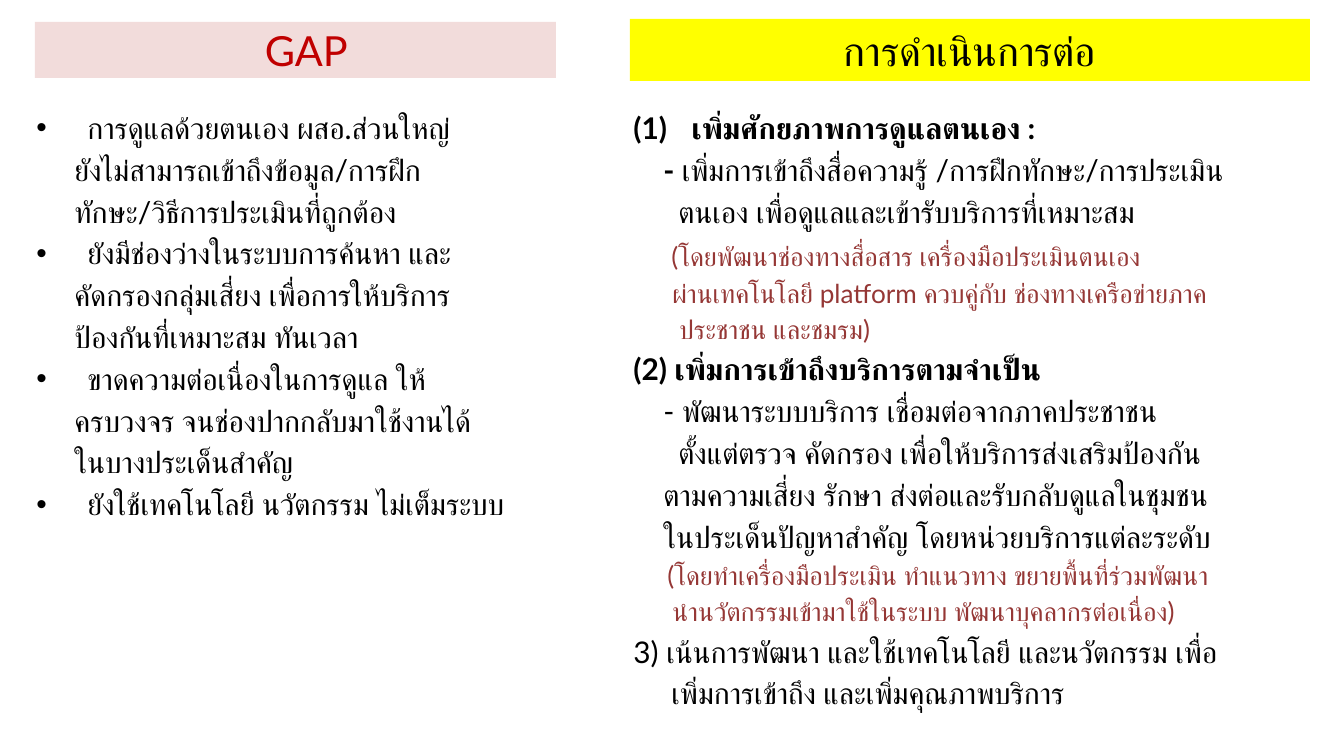
from dataclasses import dataclass

from lxml.etree import SubElement
from pptx import Presentation
from pptx.dml.color import RGBColor
from pptx.enum.shapes import MSO_SHAPE
from pptx.enum.text import MSO_ANCHOR, MSO_AUTO_SIZE, PP_ALIGN
from pptx.oxml.ns import qn
from pptx.util import Emu, Pt

SCALE = 914400 / 134.4
FONT = "Lato"
BLACK = "000000"
MAROON = "953735"
HANG = 51
WRAPPED = 38


@dataclass
class Frame:
    left: int
    top: int
    width: int
    height: int


@dataclass
class Line:
    text: str
    margin: int = 0
    size: int = 16
    color: str = BLACK
    bold: bool = False
    bullet: str = ""
    lead: str = ""
    before: float = 0


def px(length: int) -> Emu:
    return Emu(round(length * SCALE))


def rgb(color: str) -> RGBColor:
    return RGBColor.from_string(color)


def place(shape, frame: Frame) -> None:
    shape.left, shape.top = px(frame.left), px(frame.top)
    shape.width, shape.height = px(frame.width), px(frame.height)


def style(span, size: float, color: str, bold: bool = False) -> None:
    span.font.name = FONT
    span.font.size = Pt(size)
    span.font.bold = bold
    span.font.color.rgb = rgb(color)
    SubElement(span.font._element, qn("a:cs"), typeface=FONT)


def set_bullet(para, line: Line) -> None:
    properties = para._p.get_or_add_pPr()
    properties.set("marL", str(px(line.margin)))
    properties.set("indent", str(-px(line.margin) if line.bullet else 0))
    if not line.bullet:
        SubElement(properties, qn("a:buNone"))
        return
    SubElement(properties, qn("a:buFont"), typeface="Arial")
    if line.bullet == "(1)":
        SubElement(properties, qn("a:buAutoNum"), type="arabicParenBoth")
    else:
        SubElement(properties, qn("a:buChar"), char=line.bullet)


def write_list(box, frame: Frame, lines: list[Line]) -> None:
    place(box, frame)
    text_frame = box.text_frame
    text_frame.word_wrap = True
    text_frame.auto_size = MSO_AUTO_SIZE.NONE
    text_frame.text = "\n".join(line.text for line in lines)
    for para, line in zip(text_frame.paragraphs, lines):
        if line.before:
            para.space_before = Pt(line.before)
        set_bullet(para, line)
        if line.lead:
            para.text = line.lead
            para.add_run().text = line.text
        for span in para.runs:
            style(span, line.size, line.color, line.bold)
        if line.lead:
            para.runs[0].font.bold = True


def write_heading(shape, frame: Frame, text: str, fill: str, size: float, color: str) -> None:
    place(shape, frame)
    shape.fill.solid()
    shape.fill.fore_color.rgb = rgb(fill)
    shape.line.fill.background()
    text_frame = shape.text_frame
    text_frame.auto_size = MSO_AUTO_SIZE.NONE
    text_frame.vertical_anchor = MSO_ANCHOR.MIDDLE
    text_frame.text = text
    para = text_frame.paragraphs[0]
    para.alignment = PP_ALIGN.CENTER
    style(para.runs[0], size, color)


GAPS = [
    ["การดูแลด้วยตนเอง ผสอ.ส่วนใหญ่", "ยังไม่สามารถเข้าถึงข้อมูล/การฝึก", "ทักษะ/วิธีการประเมินที่ถูกต้อง"],
    ["ยังมีช่องว่างในระบบการค้นหา และ", "คัดกรองกลุ่มเสี่ยง เพื่อการให้บริการ", "ป้องกันที่เหมาะสม ทันเวลา"],
    ["ขาดความต่อเนื่องในการดูแล ให้", "ครบวงจร จนช่องปากกลับมาใช้งานได้", "ในบางประเด็นสำคัญ"],
    ["ยังใช้เทคโนโลยี นวัตกรรม ไม่เต็มระบบ"],
]

NEXT_STEPS = [
    Line("เพิ่มศักยภาพการดูแลตนเอง :", 58, bold=True, bullet="(1)"),
    Line("เพิ่มการเข้าถึงสื่อความรู้ /การฝึกทักษะ/การประเมิน", 30, lead="- "),
    Line("ตนเอง เพื่อดูแลและเข้ารับบริการที่เหมาะสม", 45),
    Line("(โดยพัฒนาช่องทางสื่อสาร เครื่องมือประเมินตนเอง", 38, 14, MAROON, before=6),
    Line("ผ่านเทคโนโลยี platform ควบคู่กับ ช่องทางเครือข่ายภาค", 39, 14, MAROON),
    Line("ประชาชน และชมรม)", 46, 14, MAROON),
    Line("(2) เพิ่มการเข้าถึงบริการตามจำเป็น", bold=True),
    Line("- พัฒนาระบบบริการ เชื่อมต่อจากภาคประชาชน", 30),
    Line("ตั้งแต่ตรวจ คัดกรอง เพื่อให้บริการส่งเสริมป้องกัน", 45),
    Line("ตามความเสี่ยง รักษา ส่งต่อและรับกลับดูแลในชุมชน", 30),
    Line("ในประเด็นปัญหาสำคัญ โดยหน่วยบริการแต่ละระดับ", 30),
    Line("(โดยทำเครื่องมือประเมิน ทำแนวทาง ขยายพื้นที่ร่วมพัฒนา", 34, 14, MAROON),
    Line("นำนวัตกรรมเข้ามาใช้ในระบบ พัฒนาบุคลากรต่อเนื่อง)", 39, 14, MAROON),
    Line("3) เน้นการพัฒนา และใช้เทคโนโลยี และนวัตกรรม เพื่อ"),
    Line("เพิ่มการเข้าถึง และเพิ่มคุณภาพบริการ", 38),
]


def main() -> None:
    deck = Presentation()
    deck.slide_width, deck.slide_height = px(1344), px(756)
    slide = deck.slides.add_slide(deck.slide_layouts[3])
    title, gap_list, step_list = slide.placeholders

    write_heading(title, Frame(630, 19, 680, 62), "การดำเนินการต่อ", "FFFF00", 22, BLACK)

    gap_heading = slide.shapes.add_shape(MSO_SHAPE.RECTANGLE, 0, 0, 0, 0)
    gap_heading.shadow.inherit = False
    write_heading(gap_heading, Frame(35, 22, 521, 56), "GAP", "F2DCDB", 22.2, "C00000")
    gap_heading.text_frame.margin_left = px(35)

    gap_lines = [
        Line(text, WRAPPED if index else HANG, bullet="" if index else "•")
        for group in GAPS
        for index, text in enumerate(group)
    ]
    write_list(gap_list, Frame(23, 103, 530, 595), gap_lines)
    write_list(step_list, Frame(620, 103, 699, 644), NEXT_STEPS)
    deck.save("out.pptx")


if __name__ == "__main__":
    main()
